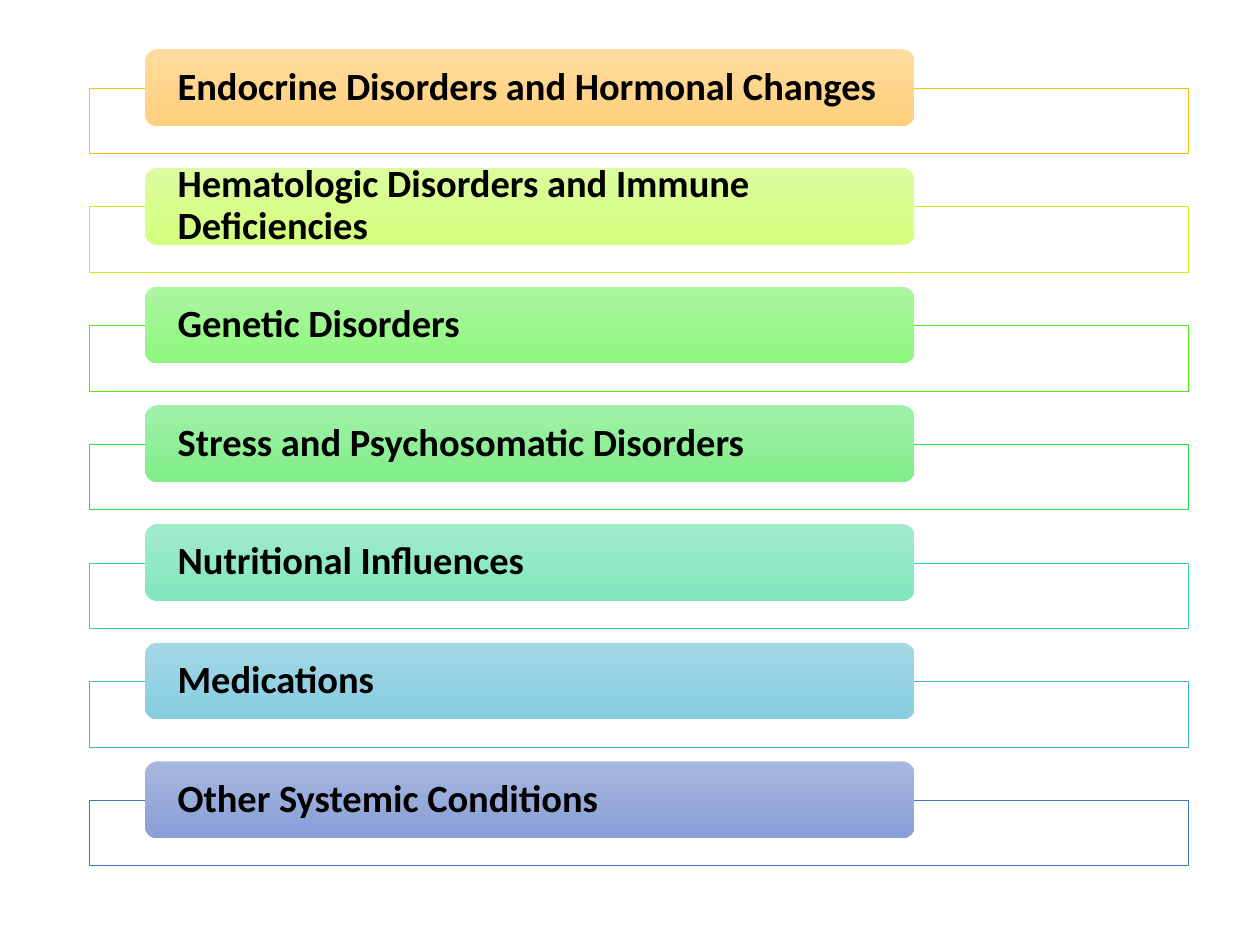
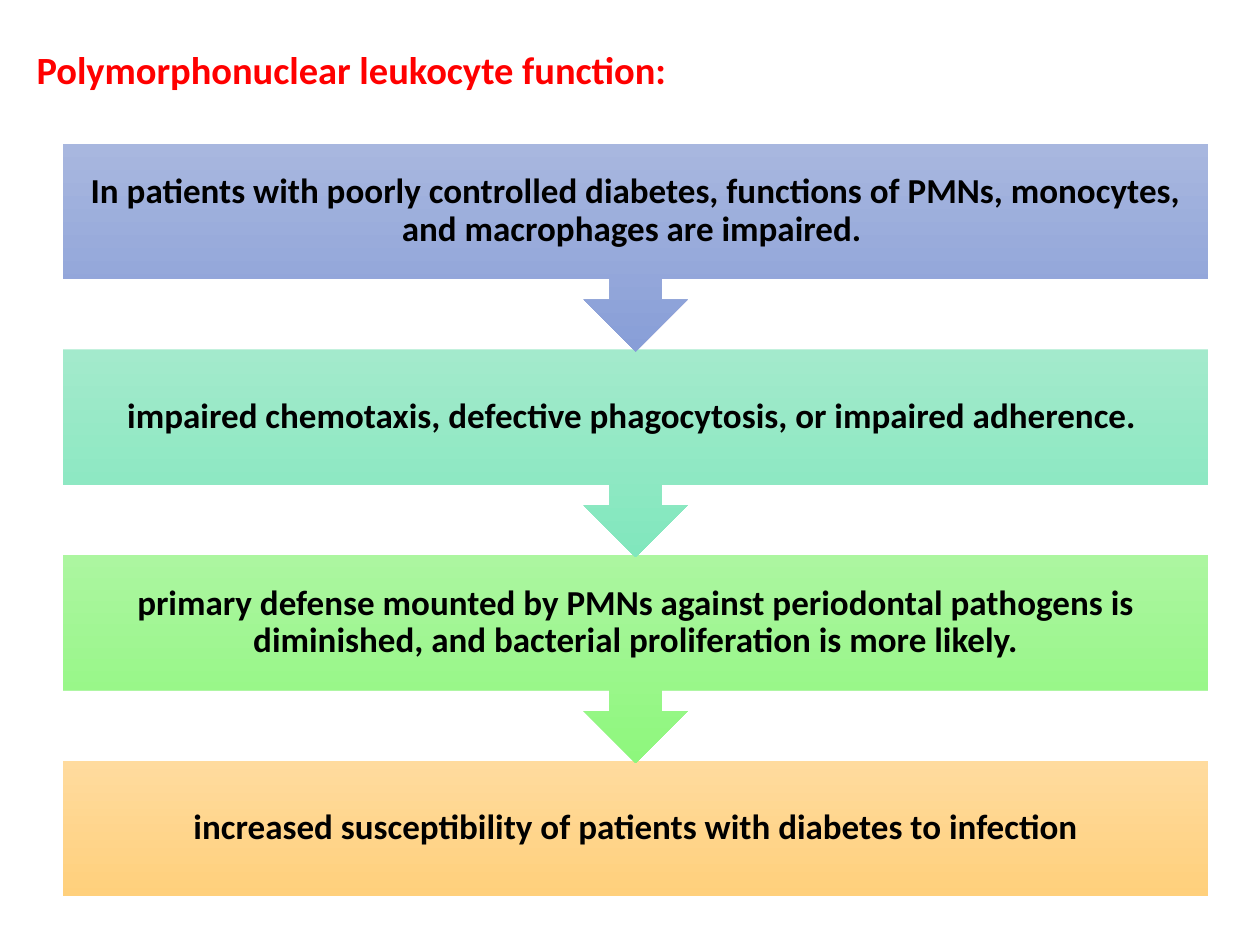
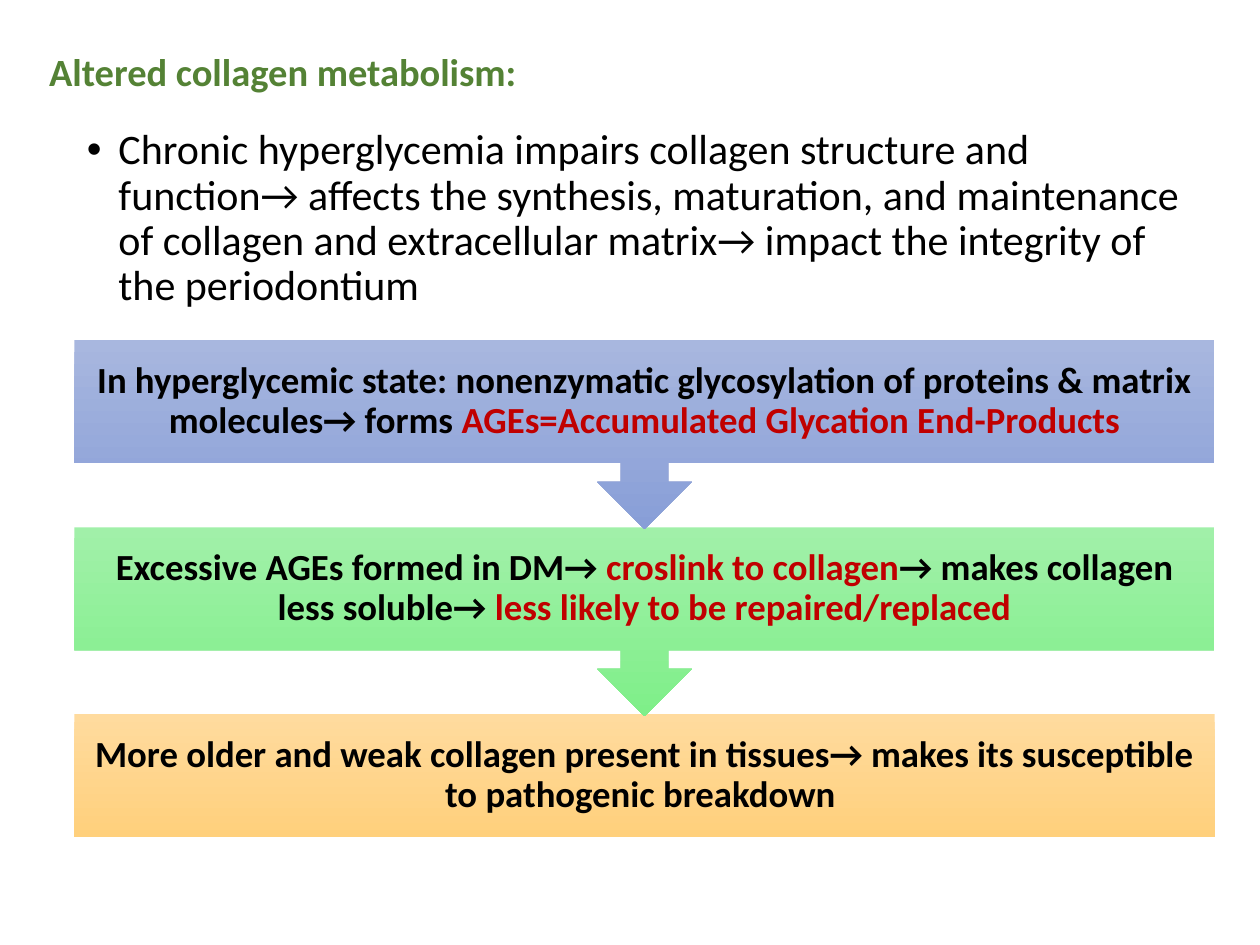
import dataclasses

import pptx
import pptx.dml.color
import pptx.enum.shapes
import pptx.enum.text
import pptx.util

Inches = pptx.util.Inches
Pt = pptx.util.Pt
RGB = pptx.dml.color.RGBColor.from_string
KIND = pptx.enum.shapes.MSO_SHAPE
ALIGN = pptx.enum.text.PP_ALIGN
ANCHOR = pptx.enum.text.MSO_ANCHOR
FIT = pptx.enum.text.MSO_AUTO_SIZE

# Content
CAUSES = [
    ("Endocrine Disorders and Hormonal Changes", "amber"),
    ("Hematologic Disorders and Immune Deficiencies", "lime"),
    ("Genetic Disorders", "green"),
    ("Stress and Psychosomatic Disorders", "mint"),
    ("Nutritional Influences", "teal"),
    ("Medications", "sky"),
    ("Other Systemic Conditions", "blue"),
]

# In a list of runs, every second one is accented
CELLS = [
    (["In patients with poorly controlled diabetes, functions of PMNs, "
      "monocytes, and macrophages are impaired. "], "blue"),
    (["impaired chemotaxis, defective phagocytosis, or impaired adherence. "], "teal"),
    (["primary defense mounted by PMNs against periodontal pathogens is "
      "diminished, and bacterial proliferation is more likely."], "green"),
    (["increased susceptibility of patients with diabetes to infection"], "amber"),
]

BULLET = ("Chronic hyperglycemia impairs collagen structure and function→ affects "
          "the synthesis, maturation, and maintenance of collagen and extracellular "
          "matrix→ impact the integrity of the periodontium")

COLLAGEN = [
    (["In hyperglycemic state: nonenzymatic glycosylation of proteins & matrix "
      "molecules→ forms ", "AGEs=Accumulated Glycation End-Products"], "blue"),
    (["Excessive AGEs formed in DM→ ", "croslink to collagen",
      "→ makes collagen less soluble→ ", "less likely to be repaired/replaced"], "mint"),
    (["More older and weak collagen present in tissues→ makes its susceptible "
      "to pathogenic breakdown "], "amber"),
]


# Theme: each hue is top of gradient, bottom of gradient, frame line
@dataclasses.dataclass(frozen=True)
class Theme:
    font: str = "Calibri"
    ink: str = "000000"
    paper: str = "FFFFFF"
    accent: str = "C00000"
    red: str = "FF0000"
    leaf: str = "548235"
    head: int = 22
    body: int = 24
    flow: int = 20
    large: int = 21
    hues: dict = dataclasses.field(default_factory=lambda: {
        "amber": ("FFDB9E", "FFD07C", "FFC000"),
        "lime": ("DCFC9F", "D3FF7C", "BEF50C"),
        "green": ("ACF6A0", "8EF77D", "53EB17"),
        "mint": ("A1F0A9", "7FEF89", "23E148"),
        "teal": ("A3EACC", "81E7BD", "2ED7A1"),
        "sky": ("A5D7E5", "84CDDF", "39B6CE"),
        "blue": ("A8B7DF", "889ED7", "4472C4"),
    })


THEME = Theme()


# Helpers
def say(frame, runs, size, color=THEME.ink, bold=True, align=ALIGN.LEFT,
        anchor=ANCHOR.MIDDLE, inset=(0.1, 0.05, 0.1, 0.05), before=0):
    frame.word_wrap = True
    frame.auto_size = FIT.NONE
    frame.vertical_anchor = anchor
    (frame.margin_left, frame.margin_top,
     frame.margin_right, frame.margin_bottom) = map(Inches, inset)
    para = frame.paragraphs[0]
    para.alignment = align
    para.line_spacing = 0.9
    para.space_before = Pt(before)
    for i, text in enumerate(runs):
        run = para.add_run()
        run.text = text
        font = run.font
        font.name, font.size, font.bold = THEME.font, Pt(size), bold
        font.color.rgb = RGB(THEME.accent if i % 2 else color)
    return para


def place(item, box):
    item.left, item.top, item.width, item.height = map(Inches, box)


def block(slide, kind, box, hue=None):
    shape = slide.shapes.add_shape(kind, *map(Inches, box))
    shape.shadow.inherit = False
    if hue:
        shape.fill.gradient()
        shape.fill.gradient_angle = 270
        for stop, color in zip(shape.fill.gradient_stops, THEME.hues[hue]):
            stop.color.rgb = RGB(color)
        shape.line.fill.background()
    return shape


def head(slide, text, box, color):
    place(slide.shapes.title, box)
    # The deep bottom inset lifts the title above the middle of its box
    say(slide.shapes.title.text_frame, [text], size=THEME.head, color=color,
        inset=(0.1, 0.05, 0.1, 0.36))


def flow(slide, steps, left, top, width, tall, pitch, size):
    """Stack arrow callouts, the last a plain box; upper ones overlap lower."""
    last = len(steps) - 1
    for i, (runs, hue) in reversed(list(enumerate(steps))):
        kind = KIND.RECTANGLE if i == last else KIND.DOWN_ARROW_CALLOUT
        high = tall * 0.65 if i == last else tall
        shape = block(slide, kind, (left, top + i * pitch, width, high), hue)
        say(shape.text_frame, runs, size=size, align=ALIGN.CENTER, inset=(0.16,) * 4)


# Slides
def causes(deck):
    slide = deck.slides.add_slide(deck.slide_layouts[6])
    for i, (text, hue) in enumerate(CAUSES):
        top = 0.39 + i * 0.942
        frame = block(slide, KIND.RECTANGLE, (0.71, top + 0.31, 8.72, 0.52))
        frame.fill.solid()
        frame.fill.fore_color.rgb = RGB(THEME.paper)
        frame.line.color.rgb = RGB(THEME.hues[hue][2])
        frame.line.width = Pt(0.5)
        label = block(slide, KIND.ROUNDED_RECTANGLE, (1.15, top, 6.11, 0.61), hue)
        say(label.text_frame, [text], size=THEME.head, inset=(0.23, 0, 0.23, 0))


def cells(deck):
    slide = deck.slides.add_slide(deck.slide_layouts[5])
    head(slide, "Polymorphonuclear leukocyte function:", (0.19, 0, 8.62, 1.45), THEME.red)
    flow(slide, CELLS, left=0.5, top=1.14, width=9.09, tall=1.65, pitch=1.633,
         size=THEME.flow)


def collagen(deck):
    slide = deck.slides.add_slide(deck.slide_layouts[1])
    head(slide, "Altered collagen metabolism:", (0.29, 0.3, 8.62, 0.89), THEME.leaf)
    body = slide.placeholders[1]
    place(body, (0.59, 0.97, 9.05, 1.91))
    para = say(body.text_frame, [BULLET], size=THEME.body, bold=False,
               anchor=ANCHOR.TOP, before=10)
    props = para._p.get_or_add_pPr()
    props.set("marL", str(Inches(0.25)))
    props.set("indent", str(Inches(-0.25)))
    flow(slide, COLLAGEN, left=0.59, top=2.7, width=9.05, tall=1.5, pitch=1.485,
         size=THEME.large)


def main():
    deck = pptx.Presentation()
    deck.slide_width, deck.slide_height = Inches(10), Inches(7.5)
    for build in (causes, cells, collagen):
        build(deck)
    deck.save("out.pptx")


if __name__ == "__main__":
    main()
